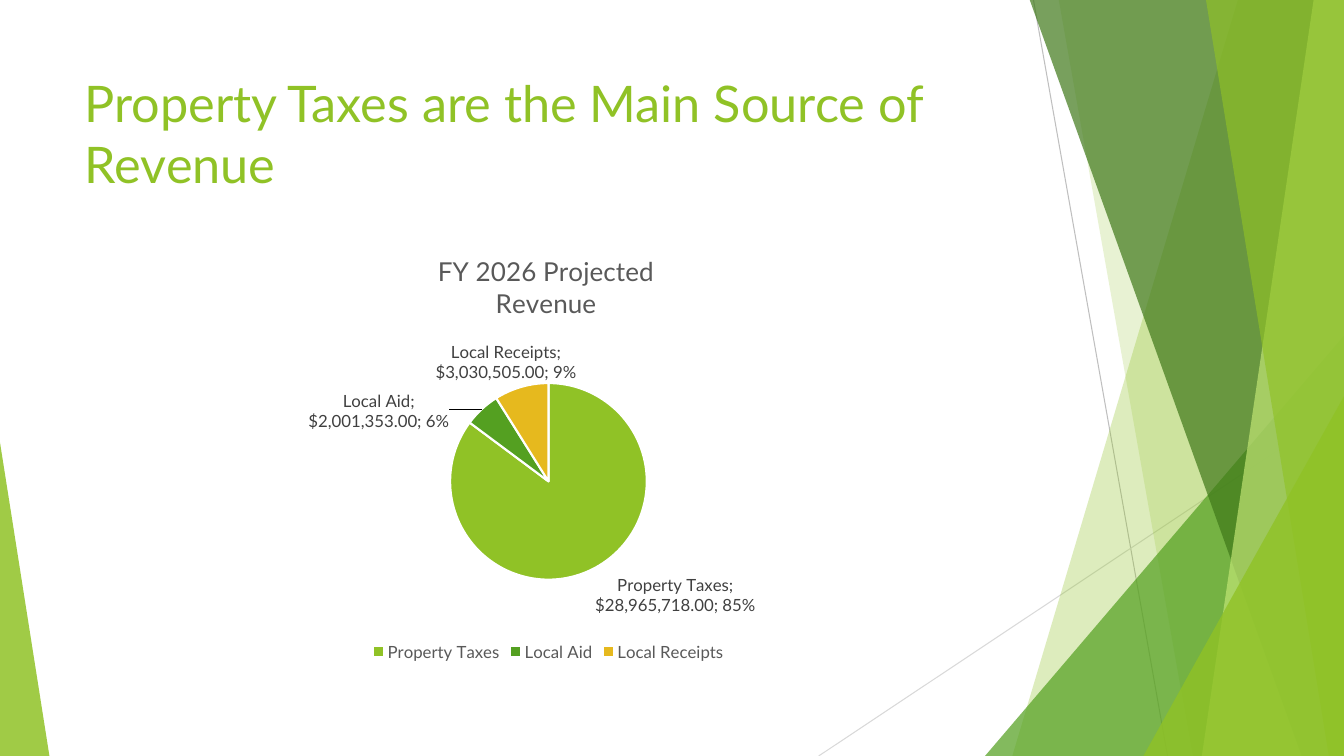
"""Build a slide that shows property taxes as the main source of revenue."""
from copy import deepcopy
from dataclasses import dataclass

from lxml.etree import SubElement as Sub
from pptx import Presentation
from pptx.chart.data import CategoryChartData as Data
from pptx.dml.color import RGBColor as RGB
from pptx.enum.chart import XL_CHART_TYPE as Kind
from pptx.enum.chart import XL_LABEL_POSITION as Spot
from pptx.enum.chart import XL_LEGEND_POSITION as Side
from pptx.enum.shapes import MSO_CONNECTOR as Link
from pptx.enum.shapes import MSO_SHAPE as Shape
from pptx.enum.text import MSO_ANCHOR as Anchor
from pptx.enum.text import PP_ALIGN as Align
from pptx.oxml import parse_xml
from pptx.oxml.ns import nsdecls, qn
from pptx.util import Inches, Pt


@dataclass(frozen=True)
class Theme:
    face: str = "Lato"
    lime: str = "90C226"
    green: str = "54A021"
    dark: str = "3F7819"
    pale: str = "C0E474"
    gold: str = "E6B91E"
    white: str = "FFFFFF"
    text: str = "404040"
    grey: str = "595959"
    rule: str = "BFBFBF"
    faint: str = "D9D9D9"
    head: float = 36
    title: float = 18.6
    note: float = 12


THEME = Theme()
WIDE, HIGH = 13.33, 7.5
REVENUE = {
    "Property Taxes": (28965718, THEME.lime),
    "Local Aid": (2001353, THEME.green),
    "Local Receipts": (3030505, THEME.gold),
}
SHIFTS = {1: (-0.03, 0.06), 2: (0.06, 0)}


def style(font, size, color):
    font.name = THEME.face
    font.size = Pt(size)
    font.bold = False
    font.color.rgb = RGB.from_string(color)


def paint(shape, color, alpha):
    shape.shadow.inherit = False
    shape.line.fill.background()
    shape.fill.solid()
    shape.fill.fore_color.rgb = RGB.from_string(color)
    tint = shape.element.spPr.find(".//" + qn("a:srgbClr"))
    Sub(tint, qn("a:alpha"), val=str(alpha * 1000))


def add_rule(slide, start, end, color):
    ends = [Inches(n) for n in (*start, *end)]
    rule = slide.shapes.add_connector(Link.STRAIGHT, *ends)
    rule.line.width = Pt(0.75)
    rule.line.color.rgb = RGB.from_string(color)
    Sub(rule.element.spPr, qn("a:effectLst"))


def add_band(slide, top, foot, color, alpha):
    spots = [(top, -0.01), (WIDE, -0.01), (WIDE, HIGH), (foot, HIGH)]
    first, *rest = [(Inches(x), Inches(y)) for x, y in spots]
    form = slide.shapes.build_freeform(*first, scale=1.0)
    form.add_line_segments(rest, close=True)
    paint(form.convert_to_shape(), color, alpha)


def add_wedge(slide, left, top, width, peak, color, alpha):
    box = [Inches(n) for n in (left, top, width, HIGH - top)]
    wedge = slide.shapes.add_shape(Shape.ISOSCELES_TRIANGLE, *box)
    wedge.adjustments[0] = peak
    paint(wedge, color, alpha)


def add_decor(slide):
    add_rule(slide, (10.25, 0), (11.58, HIGH), THEME.rule)
    add_rule(slide, (WIDE, 4.03), (8.12, HIGH), THEME.faint)
    add_band(slide, 12.28, 10.04, THEME.lime, 30)
    add_band(slide, 10.5, 11.83, THEME.lime, 20)
    add_wedge(slide, 9.77, 3.33, 3.56, 1, THEME.green, 72)
    add_band(slide, 10.21, 12.91, THEME.dark, 70)
    add_band(slide, 13.03, 11.92, THEME.pale, 70)
    add_band(slide, 11.96, 13.18, THEME.lime, 65)
    add_wedge(slide, 11.34, 3.93, 1.99, 1, THEME.lime, 80)
    add_wedge(slide, 0, 4.39, 0.49, 0, THEME.lime, 85)


def set_title(slide, text):
    title = slide.shapes.title
    title.left, title.top = Inches(0.74), Inches(0.67)
    title.width, title.height = Inches(9.4), Inches(1.44)
    frame = title.text_frame
    frame.text = text
    frame.word_wrap = True
    frame.vertical_anchor = Anchor.TOP
    line = frame.paragraphs[0]
    line.alignment = Align.LEFT
    style(line.font, THEME.head, THEME.lime)
    title.element.getparent().append(title.element)


def place(node, index, **values):
    old = node.find(qn("c:layout"))
    if old is not None:
        node.remove(old)
    layout = parse_xml(f"<c:layout {nsdecls('c')}><c:manualLayout/></c:layout>")
    for tag, value in values.items():
        Sub(layout[0], qn("c:" + tag), val=str(value))
    node.insert(index, layout)


def add_labels(plot, root):
    labels = plot.series[0].data_labels
    labels.position = Spot.OUTSIDE_END
    labels.show_value = labels.show_percentage = True
    labels.show_category_name = True
    labels.show_legend_key = labels.show_series_name = False
    style(labels.font, THEME.note, THEME.text)
    node = root.find(".//" + qn("c:ser")).find(qn("c:dLbls"))
    mark = parse_xml(f"<c:separator {nsdecls('c')}>; </c:separator>")
    lead = node.find(qn("c:showLeaderLines"))
    if lead is None:
        lead = Sub(node, qn("c:showLeaderLines"))
    lead.set("val", "1")
    lead.addprevious(mark)
    parts = [part for part in node if part is not lead]
    for spot, (index, (x, y)) in enumerate(SHIFTS.items()):
        label = parse_xml(f"<c:dLbl {nsdecls('c')}><c:idx val='{index}'/></c:dLbl>")
        label.extend(deepcopy(parts))
        place(label, 1, x=x, y=y)
        node.insert(spot, label)


def add_pie(slide):
    data = Data(number_format='"$"#,##0.00')
    data.categories = list(REVENUE)
    data.add_series("Series 1", [value for value, _ in REVENUE.values()])
    box = [Inches(n) for n in (0.74, 2.36, 9.4, 4.24)]
    chart = slide.shapes.add_chart(Kind.PIE, *box, data).chart
    style(chart.font, THEME.note, THEME.text)
    chart.has_title = True
    frame = chart.chart_title.text_frame
    frame.text = "FY 2026 Projected\nRevenue"
    for line in frame.paragraphs:
        style(line.font, THEME.title, THEME.grey)
    place(chart.chart_title.element, 1,
          xMode="edge", yMode="edge", x=0.38, y=0.03)
    chart.has_legend = True
    chart.legend.position = Side.BOTTOM
    chart.legend.include_in_layout = False
    style(chart.legend.font, THEME.note, THEME.grey)
    plot = chart.plots[0]
    plot.vary_by_categories = True
    for index, (_, color) in enumerate(REVENUE.values()):
        look = plot.series[0].points[index].format
        look.fill.solid()
        look.fill.fore_color.rgb = RGB.from_string(color)
        look.line.color.rgb = RGB.from_string(THEME.white)
        look.line.width = Pt(1.5)
    add_labels(plot, chart.element)
    place(chart.element.find(".//" + qn("c:plotArea")), 0,
          layoutTarget="inner", xMode="edge", yMode="edge",
          x=0.39, y=0.34, w=0.22, h=0.46)


def main():
    deck = Presentation()
    deck.slide_width, deck.slide_height = Inches(WIDE), Inches(HIGH)
    slide = deck.slides.add_slide(deck.slide_layouts[5])
    add_decor(slide)
    set_title(slide, "Property Taxes are the Main Source of Revenue")
    add_pie(slide)
    deck.save("out.pptx")


if __name__ == "__main__":
    main()
